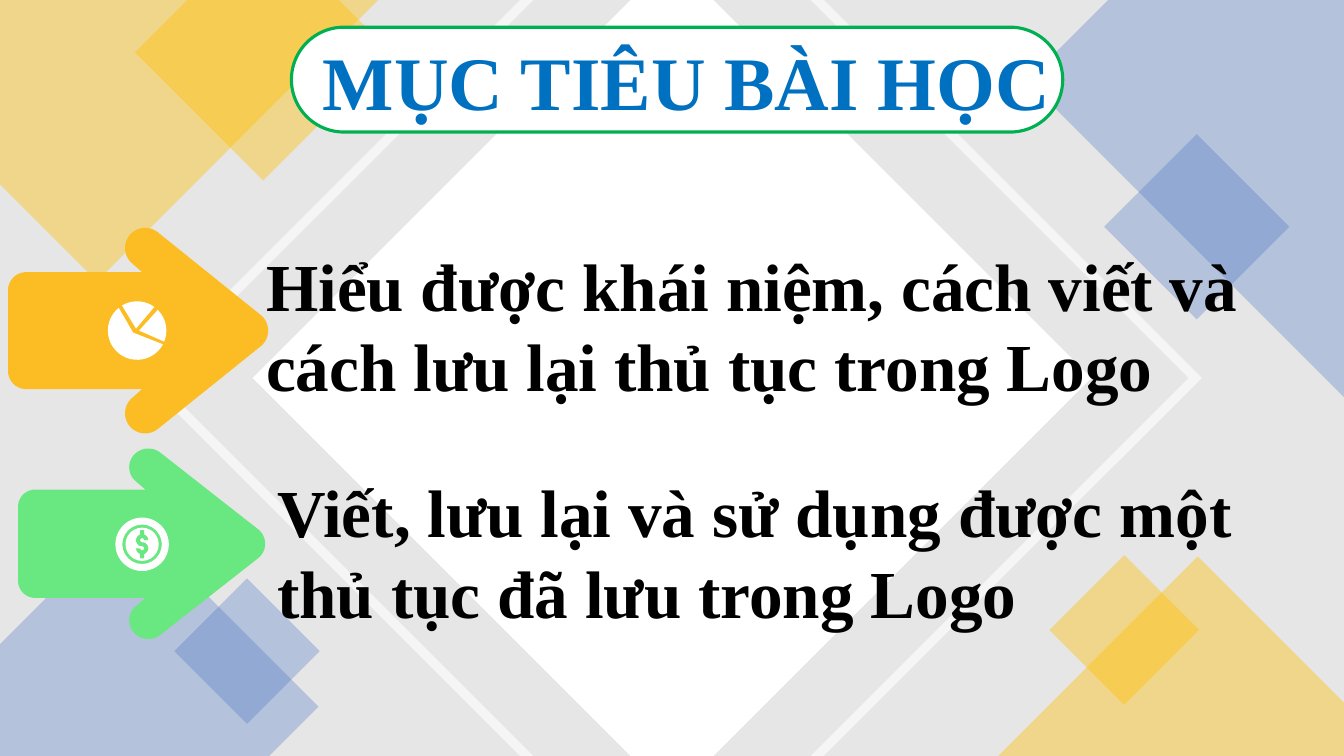
from math import cos, radians, sin

from lxml.etree import SubElement
from pptx import Presentation
from pptx.dml.color import RGBColor
from pptx.enum.shapes import MSO_SHAPE as Preset
from pptx.enum.text import MSO_ANCHOR as Anchor
from pptx.enum.text import MSO_AUTO_SIZE as AutoSize
from pptx.enum.text import PP_ALIGN as Align
from pptx.oxml.ns import qn
from pptx.util import Inches, Pt

COLORS = {
    "ground": "E7E6E6", "white": "FFFFFF", "gold": "FFC000", "blue": "4472C4",
    "border": "00B050", "title": "0070C0", "text": "000000",
    "orange": "FCBD24", "green": "69E781",
}
WIDTH, HEIGHT = 13.33, 7.5
FONT = "Times New Roman"


def arc(center, radius, start, end, steps=24):
    """List points on a circle, with angles in degrees clockwise from the right."""
    angles = [radians(start + (end - start) * step / steps) for step in range(steps + 1)]
    return [(center[0] + radius * cos(angle), center[1] + radius * sin(angle))
            for angle in angles]


def mirror(points, total, axis):
    """Reflect points along one axis within a given total length."""
    return [(total - x, y) if axis == 0 else (x, total - y) for x, y in points]


def clip(points, axis, limit, side):
    """Cut a polygon at a limit; side 1 keeps what is above it, -1 what is below."""
    kept = []
    for start, end in zip(points, points[1:] + points[:1]):
        before, after = [side * (point[axis] - limit) for point in (start, end)]
        if before >= 0:
            kept.append(start)
        if before * after < 0:
            share = before / (before - after)
            kept.append(tuple(a + share * (b - a) for a, b in zip(start, end)))
    return kept


def paint(shape, color, opacity=100):
    """Give a shape a flat fill without outline or shadow."""
    shape.shadow.inherit = False
    shape.fill.solid()
    shape.fill.fore_color.rgb = RGBColor.from_string(COLORS[color])
    shape.line.fill.background()
    if opacity < 100:
        tint = shape.element.spPr.find(".//" + qn("a:srgbClr"))
        SubElement(tint, qn("a:alpha"), val=str(opacity * 1000))


def add_preset(shapes, preset, place, color, opacity=100, rotation=0):
    """Add a filled preset shape at left, top, width, height."""
    shape = shapes.add_shape(preset, *map(Inches, place))
    shape.rotation = rotation
    paint(shape, color, opacity)
    return shape


def add_outline(shapes, color, *contours, opacity=100):
    """Add one filled freeform made of closed contours."""
    start, *rest = [[(Inches(x), Inches(y)) for x, y in contour] for contour in contours]
    builder = shapes.build_freeform(*start[0])
    builder.add_line_segments(start[1:], close=True)
    for points in rest:
        builder.move_to(*points[0])
        builder.add_line_segments(points[1:], close=True)
    paint(builder.convert_to_shape(), color, opacity)


def add_cut_diamond(shapes, center, reach, color, opacity):
    """Add a diamond cut off at the page edges; reach is center to corner."""
    points = arc(center, reach, 0, 270, steps=3)
    for axis, length in enumerate((WIDTH, HEIGHT)):
        points = clip(points, axis, 0, 1)
        points = clip(points, axis, length, -1)
    add_outline(shapes, color, points, opacity=opacity)


def add_square_diamond(shapes, center, side, color, opacity):
    """Add a square turned by 45 degrees about its center."""
    place = (center[0] - side / 2, center[1] - side / 2, side, side)
    add_preset(shapes, Preset.RECTANGLE, place, color, opacity, rotation=45)


def add_chevrons(shapes, tip, thickness):
    """Add a pair of facing chevrons as tall as the page."""
    middle = HEIGHT / 2
    outer, inner = [[(x - middle, 0), (x, middle), (x - middle, HEIGHT)]
                    for x in (tip, tip - thickness)]
    right = outer + inner[::-1]
    add_outline(shapes, "white", right, mirror(right, WIDTH, axis=0), opacity=60)


def add_background(shapes):
    """Draw the grey ground with its translucent diamonds and chevrons."""
    add_preset(shapes, Preset.RECTANGLE, (0, 0, WIDTH, HEIGHT), "ground")
    for center, reach, color, opacity in [((0.96, -0.21), 3, "gold", 40),
                                          ((2.61, 0.52), 1.27, "gold", 40),
                                          ((14.19, 0.8), 4, "blue", 30),
                                          ((1.27, 7.01), 1.89, "blue", 30),
                                          ((WIDTH / 2, HEIGHT / 2), 4.16, "white", 100),
                                          ((11.88, 8.52), 3, "gold", 40)]:
        add_cut_diamond(shapes, center, reach, color, opacity)
    add_chevrons(shapes, tip=11.92, thickness=0.13)
    for center, side, color, opacity in [((11.87, 2.25), 1.3, "blue", 30),
                                         ((2.45, 6.46), 1.02, "blue", 30),
                                         ((11.15, 6.25), 1.05, "gold", 40)]:
        add_square_diamond(shapes, center, side, color, opacity)


def add_title_pill(shapes):
    """Draw the white pill with a green border behind the title."""
    pill = add_preset(shapes, Preset.ROUNDED_RECTANGLE, (2.89, 0.27, 7.65, 1.04), "white")
    pill.adjustments[0] = 0.5
    pill.line.color.rgb = RGBColor.from_string(COLORS["border"])
    pill.line.width = Pt(2.25)


def add_arrow(shapes, color, left, top, width, height):
    """Add a rounded arrow: the upper half is drawn, then mirrored."""
    full_width, full_height = 2.58, 2.04
    body_top, notch, corner, bend, slope = 0.44, 1.33, 0.18, 0.2, 38.7
    edge = 270 + slope
    upper = arc((corner, body_top + corner), corner, 180, 270)
    upper += [(notch, body_top)]
    upper += arc((1.36, bend), bend, edge - 180, edge)
    upper += arc((full_width - bend, full_height / 2), bend, edge, 360)
    lower = mirror(upper[::-1], full_height, axis=1)
    add_outline(shapes, color, [(left + x * width / full_width, top + y * height / full_height)
                                for x, y in upper + lower])


def add_pie_icon(shapes, center, radius):
    """Draw three slices, each with its own apex so that gaps remain."""
    for shift_x, shift_y, start, end in [(-0.04, 0.02, 28, 231),
                                         (-0.01, -0.02, 239, 306),
                                         (0.02, 0, 315, 382)]:
        apex = (center[0] + shift_x, center[1] + shift_y)
        add_outline(shapes, "white", [apex] + arc(center, radius, start, end))


def add_coin_icon(shapes, center, color):
    """Draw a ring and a disc with a dollar sign made of two bowls and two stems."""
    x, y = center
    for preset, size in [(Preset.DONUT, 0.53), (Preset.OVAL, 0.33)]:
        coin = add_preset(shapes, preset, (x - size / 2, y - size / 2, size, size), "white")
        if preset == Preset.DONUT:
            coin.adjustments[0] = 0.13
    bowl, half_stroke, stem_height, reach = 0.04, 0.02, 0.05, 0.14
    wide, narrow = bowl + half_stroke, bowl - half_stroke
    upper, lower = (x, y - bowl), (x, y + bowl)
    add_outline(shapes, color,
                arc(upper, wide, 360, 90) + arc(lower, narrow, 270, 540)
                + arc(lower, wide, 540, 270) + arc(upper, narrow, 90, 360))
    for stem_top in (y - reach, y + reach - stem_height):
        add_preset(shapes, Preset.ROUNDED_RECTANGLE,
                   (x - half_stroke, stem_top, 2 * half_stroke, stem_height), color)


def fill_placeholder(box, place, text, size, color, align):
    """Move a placeholder to the front and write bold text without a bullet."""
    box.left, box.top, box.width, box.height = map(Inches, place)
    box.element.getparent().append(box.element)
    frame = box.text_frame
    frame.text = text
    frame_format = {"word_wrap": True, "auto_size": AutoSize.SHAPE_TO_FIT_TEXT,
                    "vertical_anchor": Anchor.TOP}
    for name, value in frame_format.items():
        setattr(frame, name, value)
    para = frame.paragraphs[0]
    para.alignment, para.space_before = align, Pt(0)
    settings = box.element.find(".//" + qn("a:pPr"))
    for name in ("marL", "indent"):
        settings.set(name, "0")
    SubElement(settings, qn("a:buNone"))
    span = para.runs[0]
    for name, value in {"name": FONT, "size": Pt(size), "bold": True}.items():
        setattr(span.font, name, value)
    span.font.color.rgb = RGBColor.from_string(COLORS[color])


def main():
    """Build the lesson goals slide and save it."""
    deck = Presentation()
    deck.slide_width, deck.slide_height = Inches(WIDTH), Inches(HEIGHT)
    page = deck.slides.add_slide(deck.slide_layouts[3])
    title, first_goal, second_goal = list(page.placeholders)
    add_background(page.shapes)
    add_title_pill(page.shapes)
    fill_placeholder(title, (2.79, 0.3, 8.04, 1.01), "MỤC TIÊU BÀI HỌC", 54, "title",
                     Align.CENTER)
    pie_arrow = page.shapes.add_group_shape().shapes
    add_arrow(pie_arrow, "orange", 0.08, 2.26, 2.58, 2.04)
    add_pie_icon(pie_arrow, center=(1.36, 3.28), radius=0.29)
    coin_arrow = page.shapes.add_group_shape().shapes
    add_arrow(coin_arrow, "green", 0.18, 4.45, 2.45, 1.89)
    add_coin_icon(coin_arrow, center=(1.41, 5.4), color="green")
    goals = [(first_goal, (2.54, 2.37, 10.71, 1.72),
              "Hiểu được khái niệm, cách viết và cách lưu lại thủ tục trong Logo"),
             (second_goal, (2.65, 4.62, 10.6, 1.72),
              "Viết, lưu lại và sử dụng được một thủ tục đã lưu trong Logo")]
    for goal, place, text in goals:
        fill_placeholder(goal, place, text, 48, "text", Align.LEFT)
    deck.save("out.pptx")


if __name__ == "__main__":
    main()
